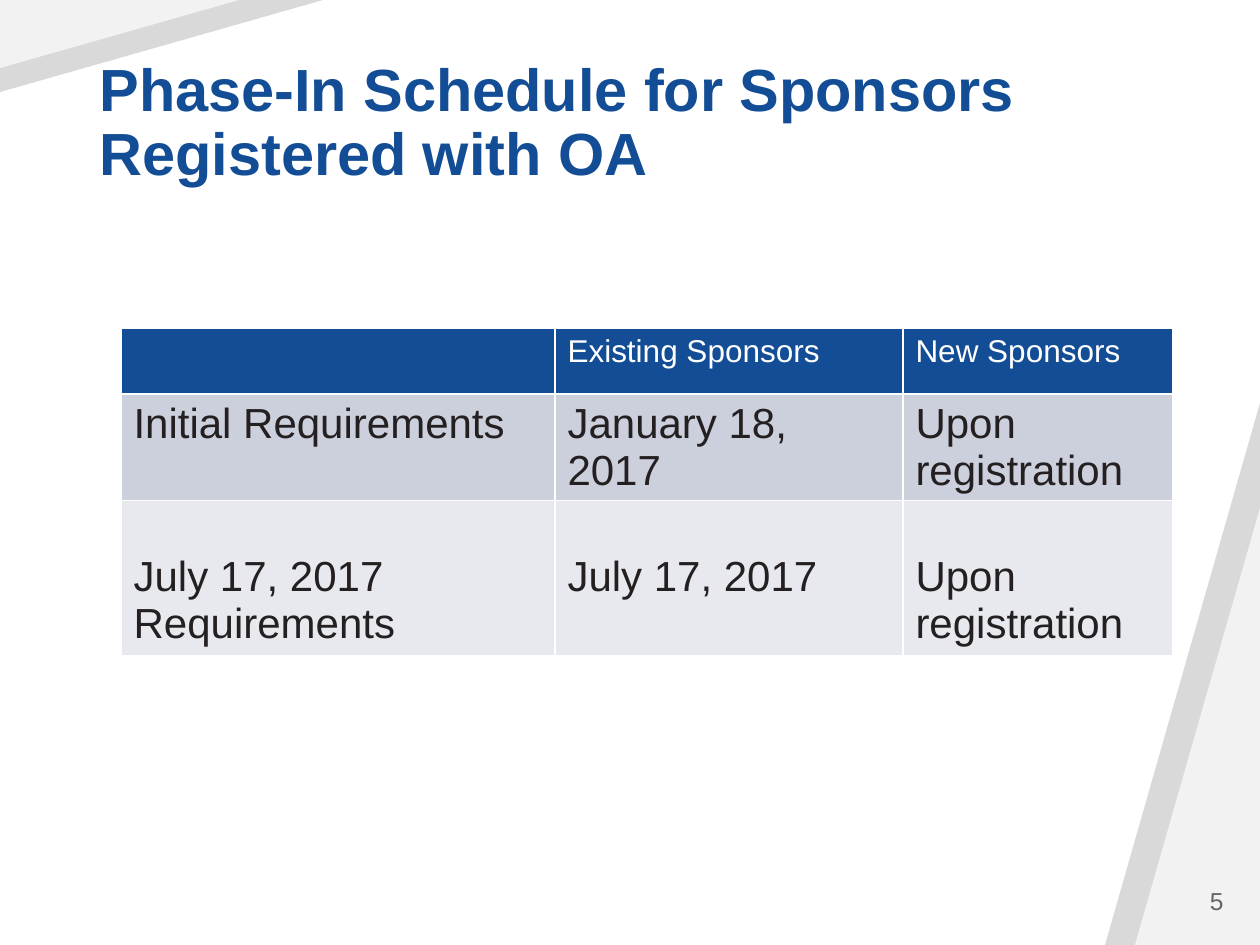
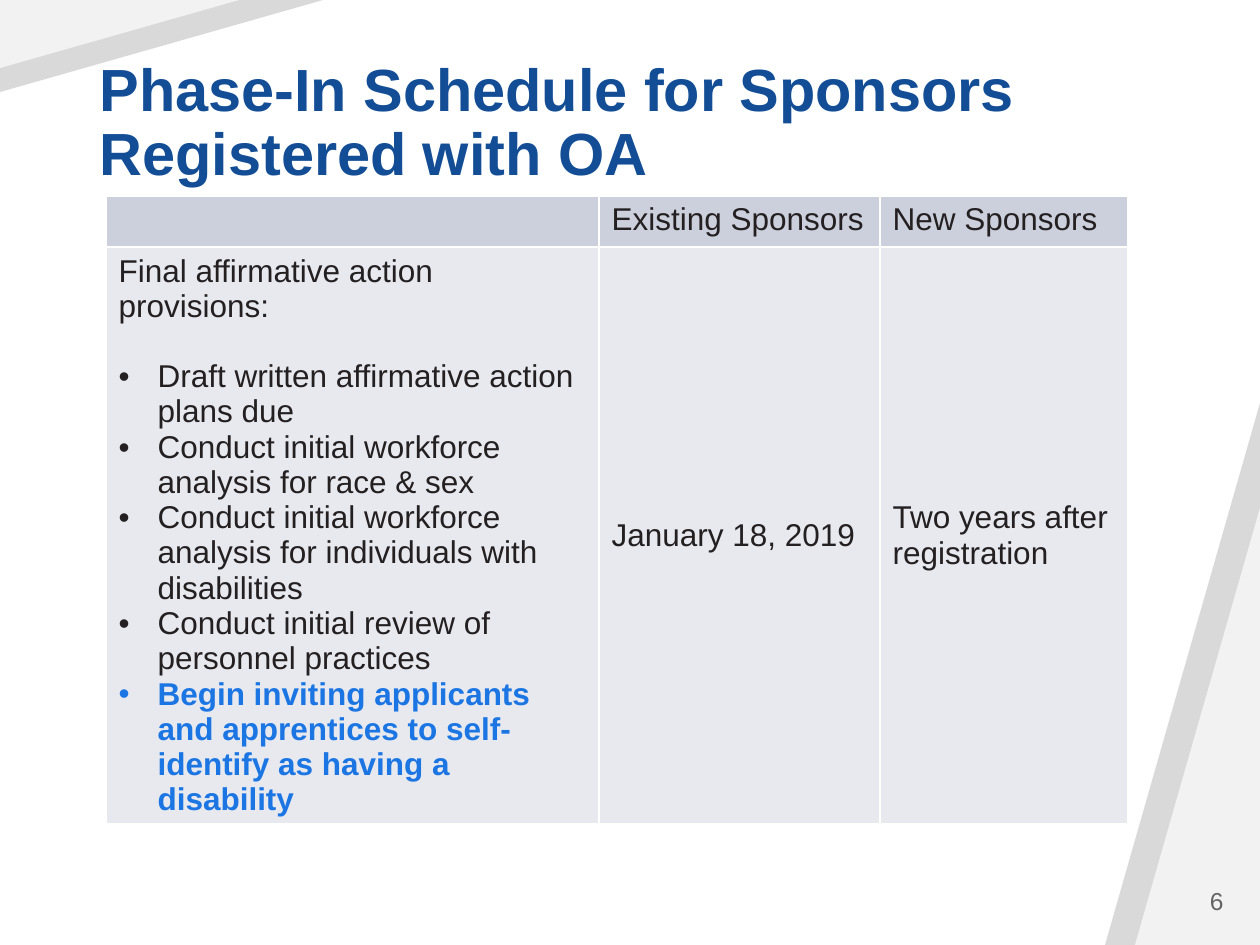
from lxml.etree import SubElement
from pptx import Presentation
from pptx.dml.color import RGBColor
from pptx.enum.shapes import MSO_SHAPE as Shape
from pptx.enum.text import MSO_ANCHOR as Anchor, MSO_AUTO_SIZE as AutoSize, PP_ALIGN as Align
from pptx.oxml.ns import qn
from pptx.util import Emu, Pt

FONT = "Arial"
COLORS = {
    "title": "124D95", "text": "242021", "accent": "1B75E2", "number": "646464",
    "white": "FFFFFF", "header": "124D95", "dark row": "CCD0DD", "light row": "E7E9EF",
    "outer band": "D9D9D9", "inner band": "F2F2F2",
}
SLIDE_SIZE = (1260, 945)
TITLE = "Phase-In Schedule for Sponsors Registered with OA"
TITLE_BOX = (87, 50, 1096, 145)
NUMBER_BOX = (1060, 876, 176, 50)
BULLET_INDENT = 39
SPONSORS = ["", "Existing Sponsors", "New Sponsors"]

BANDS = [
    ("outer band", (1105, 403, 155, 542), 0),
    ("inner band", (1135, 508, 125, 437), 0),
    ("outer band", (0, 0, 323, 92), 180),
    ("inner band", (0, 0, 239, 68), 180),
]

PROVISIONS = {
    "intro": "Final affirmative action provisions:",
    "bullets": [
        ("Draft written affirmative action plans due", "text"),
        ("Conduct initial workforce analysis for race & sex", "text"),
        ("Conduct initial workforce analysis for individuals with disabilities", "text"),
        ("Conduct initial review of personnel practices", "text"),
        ("Begin inviting applicants and apprentices to self-identify as having a disability",
         "accent"),
    ],
}

SCHEDULES = [
    {
        "number": "5", "origin": (121, 328), "columns": [434, 348, 270],
        "rows": [
            {"cells": SPONSORS, "height": 66, "fill": "header", "color": "white"},
            {"cells": ["Initial Requirements", "January 18, 2017", "Upon registration"],
             "height": 106, "fill": "dark row", "size": 24},
            {"cells": ["July 17, 2017 Requirements", "July 17, 2017", "Upon registration"],
             "height": 156, "fill": "light row", "size": 24, "top": 53},
        ],
    },
    {
        "number": "6", "origin": (106, 196), "columns": [493, 281, 248],
        "rows": [
            {"cells": SPONSORS, "height": 47, "fill": "dark row"},
            {"cells": [PROVISIONS, "January 18, 2019", "Two years after registration"],
             "height": 576, "fill": "light row", "anchor": Anchor.MIDDLE},
        ],
    },
]


def px(value):
    return Emu(round(value * 914400 / 126))


def place(shape, box):
    shape.left, shape.top, shape.width, shape.height = map(px, box)


def rgb(name):
    return RGBColor.from_string(COLORS[name])


def add_run(paragraph, text, size, color, bold=False):
    run = paragraph.add_run()
    run.text = text
    run.font.name, run.font.size, run.font.bold = FONT, Pt(size), bold
    run.font.color.rgb = rgb(color)


def add_bands(slide, layout):
    for placeholder in list(layout.placeholders)[1:]:
        layout.shapes.element.remove(placeholder.element)
    for index, (color, box, rotation) in enumerate(BANDS):
        band = slide.shapes.add_shape(Shape.ISOSCELES_TRIANGLE, *map(px, box))
        band.adjustments[0] = 1
        band.rotation = rotation
        band.shadow.inherit = False
        band.fill.solid()
        band.fill.fore_color.rgb = rgb(color)
        band.line.fill.background()
        layout.shapes.element.insert(2 + index, band.element)


def add_title(slide):
    title = slide.shapes.title
    place(title, TITLE_BOX)
    frame = title.text_frame
    frame.word_wrap, frame.auto_size = True, AutoSize.NONE
    frame.vertical_anchor = Anchor.BOTTOM
    paragraph = frame.paragraphs[0]
    paragraph.alignment, paragraph.line_spacing = Align.LEFT, 0.9
    add_run(paragraph, TITLE, 34, "title", True)


def add_number(slide, number):
    frame = slide.shapes.add_textbox(*map(px, NUMBER_BOX)).text_frame
    frame.word_wrap, frame.vertical_anchor = True, Anchor.MIDDLE
    frame.paragraphs[0].alignment = Align.RIGHT
    add_run(frame.paragraphs[0], number, 14, "number")


def add_bullet(paragraph):
    properties = paragraph._p.get_or_add_pPr()
    properties.set("marL", str(px(BULLET_INDENT)))
    properties.set("indent", str(-px(BULLET_INDENT)))
    SubElement(properties, qn("a:buFont")).set("typeface", FONT)
    SubElement(properties, qn("a:buChar")).set("char", "•")


def add_borders(cell):
    properties = cell._tc.get_or_add_tcPr()
    for side in ("lnL", "lnR", "lnT", "lnB"):
        line = SubElement(properties, qn(f"a:{side}"), w=str(Pt(1)))
        fill = SubElement(line, qn("a:solidFill"))
        SubElement(fill, qn("a:srgbClr"), val=COLORS["white"])


def add_provisions(frame, size):
    add_run(frame.paragraphs[0], PROVISIONS["intro"], size, "text")
    for index, (text, color) in enumerate(PROVISIONS["bullets"]):
        paragraph = frame.add_paragraph()
        add_bullet(paragraph)
        if index == 0:
            paragraph.space_before = Pt(20)
        add_run(paragraph, text, size, color, color == "accent")


def fill_cell(cell, content, row):
    add_borders(cell)
    cell.fill.solid()
    cell.fill.fore_color.rgb = rgb(row["fill"])
    cell.vertical_anchor = row.get("anchor", Anchor.TOP)
    if "top" in row:
        cell.margin_top = px(row["top"])
    size = row.get("size", 18)
    if content is PROVISIONS:
        add_provisions(cell.text_frame, size)
    elif content:
        add_run(cell.text_frame.paragraphs[0], content, size, row.get("color", "text"))


def add_schedule(slide, schedule):
    columns, rows = schedule["columns"], schedule["rows"]
    box = (*schedule["origin"], sum(columns), sum(row["height"] for row in rows))
    table = slide.shapes.add_table(len(rows), len(columns), *map(px, box)).table
    table.first_row = table.horz_banding = False
    for column, width in zip(table.columns, columns):
        column.width = px(width)
    for table_row, row in zip(table.rows, rows):
        table_row.height = px(row["height"])
        for cell, content in zip(table_row.cells, row["cells"]):
            fill_cell(cell, content, row)


def main():
    presentation = Presentation()
    presentation.slide_width, presentation.slide_height = map(px, SLIDE_SIZE)
    layout = presentation.slide_layouts[5]
    for index, schedule in enumerate(SCHEDULES):
        slide = presentation.slides.add_slide(layout)
        if index == 0:
            add_bands(slide, layout)
        add_title(slide)
        add_schedule(slide, schedule)
        add_number(slide, schedule["number"])
    presentation.save("out.pptx")


if __name__ == "__main__":
    main()
